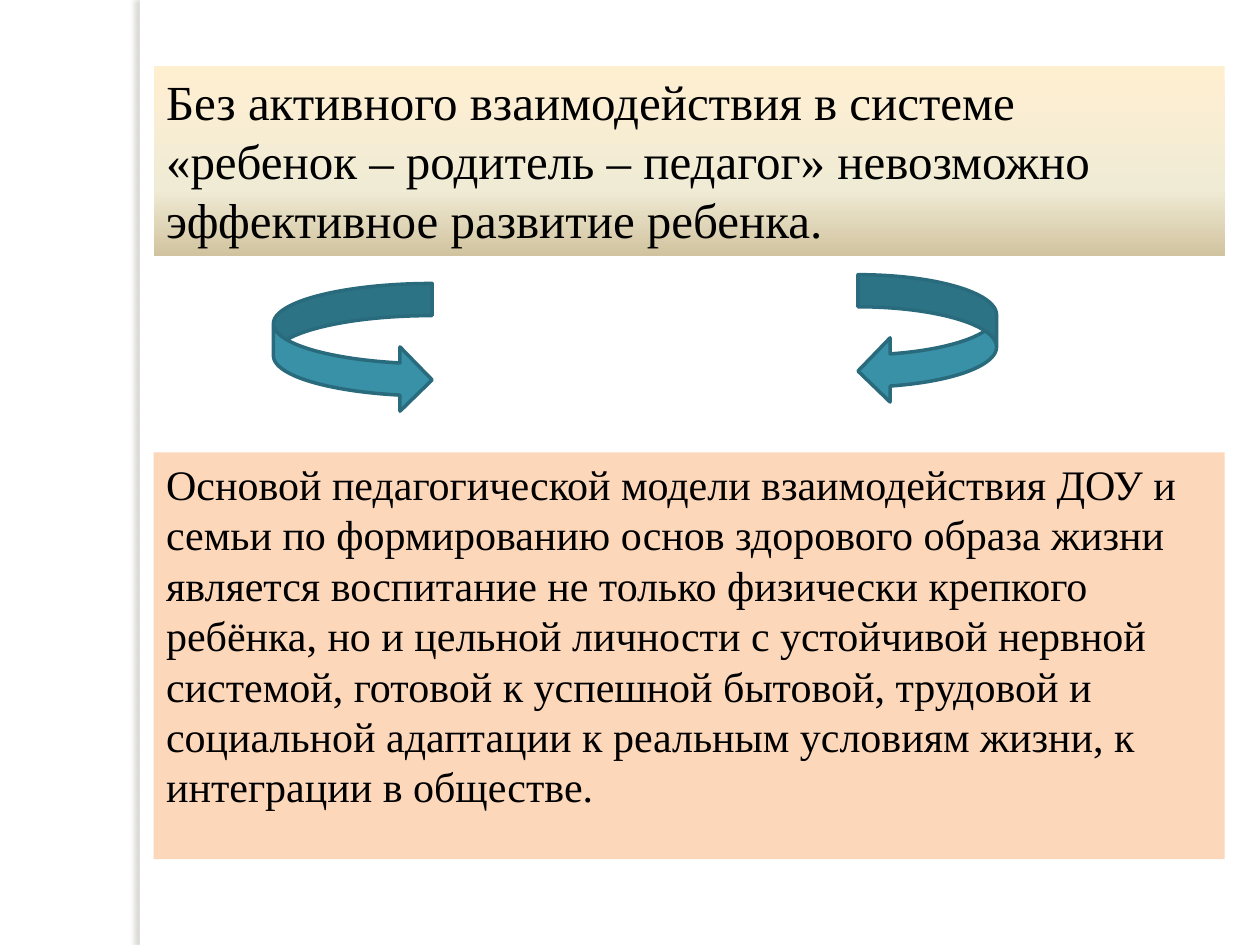
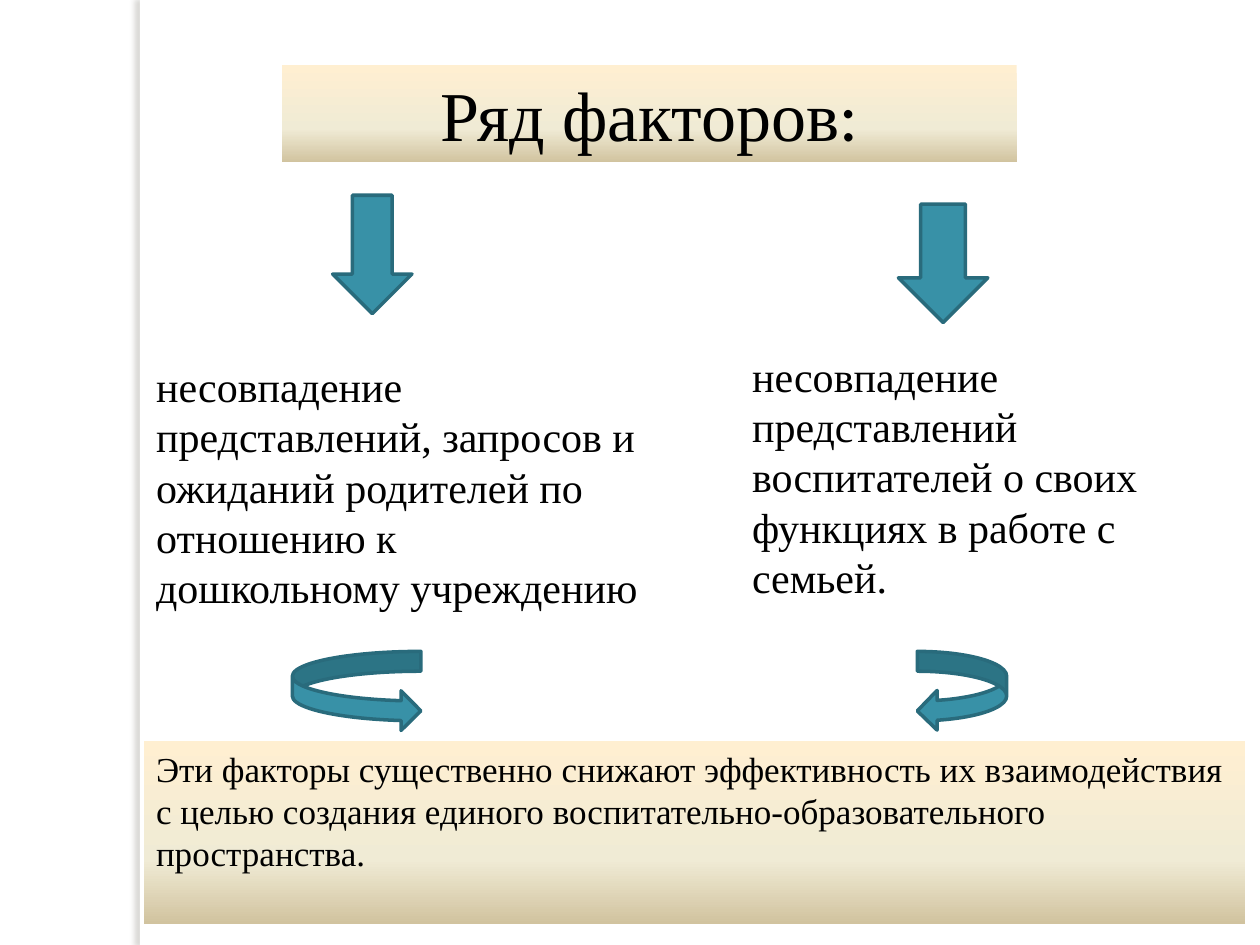
from copy import deepcopy

from lxml import etree
from pptx import Presentation
from pptx.dml.color import RGBColor
from pptx.enum.shapes import MSO_SHAPE
from pptx.enum.text import MSO_ANCHOR, PP_ALIGN
from pptx.oxml.ns import qn
from pptx.util import Inches, Pt

RECTANGLE = MSO_SHAPE.RECTANGLE
DOWN = MSO_SHAPE.DOWN_ARROW
CURVED_RIGHT = MSO_SHAPE.CURVED_RIGHT_ARROW
CURVED_LEFT = MSO_SHAPE.CURVED_LEFT_ARROW
TOP = MSO_ANCHOR.TOP
LEFT, CENTER = PP_ALIGN.LEFT, PP_ALIGN.CENTER

WIDTH, HEIGHT = 10, 7.5
SERIF, SANS = "Times New Roman", "Calibri"
WHITE, BLACK, PEACH = "FFFFFF", "000000", "FDD7BA"
TEAL, DARK_TEAL, SHADOW = "3891A7", "296B7C", "736F63"
SAND = [(0, "FFEFD1"), (0.65, "F0EBD5"), (1, "D1C39F")]
STRIP = (1.11, 0, 0.08, HEIGHT)
TITLE_TOP = 0.52

SLIDES = [
    {
        "panels": [
            {"box": (1.22, TITLE_TOP, 8.5, 1.51), "fill": SAND, "size": 28,
             "text": "Без активного взаимодействия в системе «ребенок – родитель – педагог» "
                     "невозможно эффективное развитие ребенка."},
            {"box": (1.22, 3.59, 8.5, 3.23), "fill": PEACH, "size": 24,
             "text": "Основой педагогической модели взаимодействия ДОУ и семьи по формированию "
                     "основ здорового образа жизни является воспитание не только физически "
                     "крепкого ребёнка, но и цельной личности с устойчивой нервной системой, "
                     "готовой к успешной бытовой, трудовой и социальной адаптации к реальным "
                     "условиям жизни, к интеграции в обществе."},
        ],
        "arrows": [
            (CURVED_RIGHT, (2.17, 2.25, 1.26, 1.02)),
            (CURVED_LEFT, (6.81, 2.18, 1.1, 1.02)),
        ],
    },
    {
        "panels": [
            {"box": (2.24, TITLE_TOP, 5.83, 0.77), "fill": SAND, "size": 40,
             "text": "Ряд факторов", "ending": ":", "align": CENTER},
            {"box": (1.14, 2.81, 4.09, 2.42), "size": 24,
             "text": "несовпадение представлений, запросов и ожиданий родителей по отношению "
                     "к дошкольному учреждению"},
            {"box": (5.87, 2.73, 3.62, 2.42), "size": 24,
             "text": "несовпадение представлений воспитателей о своих функциях в работе "
                     "с семьей."},
            {"box": (1.14, 5.88, 8.74, 1.45), "fill": SAND, "size": 20,
             "text": "Эти факторы существенно снижают эффективность их взаимодействия с целью "
                     "создания единого воспитательно-образовательного пространства."},
        ],
        "arrows": [
            (DOWN, (2.64, 1.55, 0.63, 0.94)),
            (DOWN, (7.13, 1.62, 0.71, 0.94)),
            (CURVED_LEFT, (7.28, 5.17, 0.71, 0.63)),
            (CURVED_RIGHT, (2.32, 5.17, 1.02, 0.63)),
        ],
    },
]


def color(value):
    """Turn a hex string into a colour."""
    return RGBColor.from_string(value)


def fill_gradient(shape, stops):
    """Fill a shape with a gradient that runs from top to bottom."""
    shape.fill.gradient()
    shape.fill.gradient_angle = 270
    stop_list = shape._element.spPr.find(".//" + qn("a:gsLst"))
    while len(stop_list) < len(stops):
        stop_list.append(deepcopy(stop_list[0]))
    for stop, (position, value) in zip(shape.fill.gradient_stops, stops):
        stop.position = position
        stop.color.rgb = color(value)


def add_shape(slide, kind, box, fill, line=None):
    """Add a preset shape with a plain or gradient fill."""
    shape = slide.shapes.add_shape(kind, *map(Inches, box))
    shape.shadow.inherit = False
    if isinstance(fill, list):
        fill_gradient(shape, fill)
    else:
        shape.fill.solid()
        shape.fill.fore_color.rgb = color(fill)
    if line:
        shape.line.color.rgb = color(line)
        shape.line.width = Pt(2)
    else:
        shape.line.fill.background()
    return shape


def write_text(shape, text, size, ending="", align=LEFT):
    """Write one paragraph, with an optional ending in the sans font."""
    frame = shape.text_frame
    frame.word_wrap = True
    frame.vertical_anchor = TOP
    paragraph = frame.paragraphs[0]
    paragraph.alignment = align
    for part, font_name in ((text, SERIF), (ending, SANS)):
        if part:
            run = paragraph.add_run()
            run.text = part
            run.font.name = font_name
            run.font.size = Pt(size)
            run.font.color.rgb = color(BLACK)


def add_strip(slide):
    """Add the side strip that casts a soft shadow to the left."""
    strip = add_shape(slide, RECTANGLE, STRIP, WHITE)
    effects = strip._element.spPr.find(qn("a:effectLst"))
    shadow = etree.SubElement(effects, qn("a:outerShdw"), blurRad=str(Pt(3)),
                              dist=str(Pt(3)), dir="10800000", rotWithShape="0")
    shade = etree.SubElement(shadow, qn("a:srgbClr"), val=SHADOW)
    etree.SubElement(shade, qn("a:alpha"), val="25000")


def add_panel(slide, box, text, size, fill=None, **text_format):
    """Add a text panel, filled or bare."""
    if fill:
        shape = add_shape(slide, RECTANGLE, box, fill)
    else:
        shape = slide.shapes.add_textbox(*map(Inches, box))
    write_text(shape, text, size, **text_format)


def main():
    """Build and save the presentation."""
    presentation = Presentation()
    presentation.slide_width, presentation.slide_height = Inches(WIDTH), Inches(HEIGHT)
    for content in SLIDES:
        slide = presentation.slides.add_slide(presentation.slide_layouts[6])
        slide.background.fill.solid()
        slide.background.fill.fore_color.rgb = color(WHITE)
        add_strip(slide)
        for panel in content["panels"]:
            add_panel(slide, **panel)
        for kind, box in content["arrows"]:
            add_shape(slide, kind, box, TEAL, line=DARK_TEAL)
    presentation.save("out.pptx")


if __name__ == "__main__":
    main()
